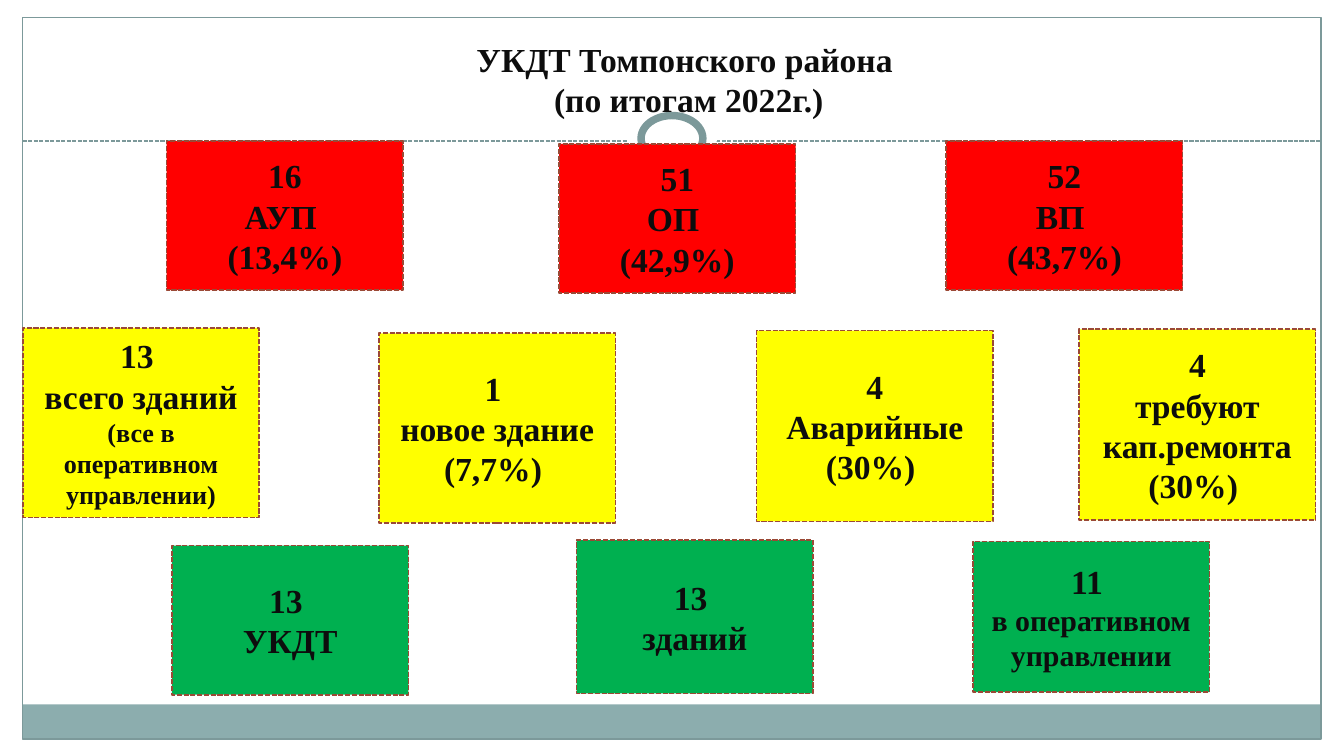
import pptx
import pptx.util
import pptx.dml.color
import pptx.enum.dml
import pptx.enum.shapes
import pptx.enum.text
import pptx.oxml.ns
import lxml.etree

# Content: a box is (left, top, height, paragraphs); a paragraph is a list of (text, size)
BIG, MID, SMALL = 18, 16, 14
TITLE = "УКДТ Томпонского района \v(по итогам 2022г.)"
ROWS = [
    ("green", [
        (1.28, 4.06, 1.11, [[("13 ", BIG)], [("УКДТ", BIG)]]),
        (4.29, 4.02, 1.14, [[("13 ", BIG)], [("зданий", BIG)]]),
        (7.24, 4.03, 1.12, [[("11 ", BIG)], [("в оперативном управлении", MID)]]),
    ]),
    ("yellow", [
        (5.63, 2.46, 1.42, [[("4", BIG)], [("Аварийные", BIG)], [("(30%) ", BIG)]]),
        (8.03, 2.45, 1.42, [[("4", BIG)], [("требуют кап.ремонта", BIG)], [("(30%) ", BIG)]]),
        (0.17, 2.44, 1.41, [[("13 ", BIG)],
                            [("всего зданий ", BIG),
                             ("(все в оперативном управлении)", SMALL)]]),
        (2.82, 2.48, 1.41, [[("1 ", BIG)], [("новое здание (7,7%) ", BIG)]]),
    ]),
    ("red", [
        (1.24, 1.05, 1.11, [[("16", BIG)], [("АУП ", BIG)], [("(13,4%)", BIG)]]),
        (4.16, 1.07, 1.11, [[("51", BIG)], [("ОП ", BIG)], [("(42,9%)", BIG)]]),
        (7.04, 1.05, 1.11, [[("52", BIG)], [("ВП ", BIG)], [("(43,7%)", BIG)]]),
    ]),
]
COLORS = {"red": "FF0000", "yellow": "FFFF00", "green": "00B050", "edge": "9B4936",
          "frame": "7C999A", "band": "8CADAE", "white": "FFFFFF", "ink": "0D0D0D"}
FONT = "Times New Roman"
WIDE = 10
HIGH = WIDE * 9 / 16
EDGE = 0.17          # frame margin at the sides
RULE = 1.05          # height of the dashed rule
BOX = 1.76           # width of every box

KIND = pptx.enum.shapes.MSO_SHAPE
inch = pptx.util.Inches


def tint(name):
    return pptx.dml.color.RGBColor.from_string(COLORS[name])


def stroke(line, name, width, dash=False):
    line.color.rgb = tint(name)
    line.width = pptx.util.Pt(width)
    if dash:
        line.dash_style = pptx.enum.dml.MSO_LINE.SQUARE_DOT


def draw(kind, x, y, w, h, fill=None, line=None, width=0.75, dash=False):
    shape = slide.shapes.add_shape(kind, inch(x), inch(y), inch(w), inch(h))
    shape.shadow.inherit = False
    if fill:
        shape.fill.solid()
        shape.fill.fore_color.rgb = tint(fill)
    else:
        shape.fill.background()
    if line:
        stroke(shape.line, line, width, dash)
    else:
        shape.line.fill.background()
    return shape


def style(para, size):
    para.alignment = pptx.enum.text.PP_ALIGN.CENTER
    font = para.font
    font.name, font.size, font.bold = FONT, pptx.util.Pt(size), True
    font.color.rgb = tint("ink")


deck = pptx.Presentation()
deck.slide_width, deck.slide_height = inch(WIDE), inch(HIGH)
slide = deck.slides.add_slide(deck.slide_layouts[6])

# Frame: bottom band, outline, dashed rule and ring
span = WIDE - 2 * EDGE
draw(KIND.RECTANGLE, EDGE, 5.24, span, 0.25, "band")
draw(KIND.RECTANGLE, EDGE, 0.13, span, 5.37, line="frame")
rule = slide.shapes.add_connector(pptx.enum.shapes.MSO_CONNECTOR.STRAIGHT,
                                  inch(EDGE), inch(RULE), inch(WIDE - EDGE), inch(RULE))
stroke(rule.line, "frame", 0.75, True)
lxml.etree.SubElement(rule._element.spPr, pptx.oxml.ns.qn("a:effectLst"))
for w, h, line in [(0.67, 0.5, None), (0.46, 0.34, "frame")]:
    draw(KIND.OVAL, (WIDE - w) / 2, 1.03 - h / 2, w, h, "white", line, 4)

# Title
head = slide.shapes.add_textbox(inch(1.42), inch(0.19), inch(7.41), inch(0.63)).text_frame
head.word_wrap = True
head.margin_top = head.margin_bottom = inch(0.1)
head.paragraphs[0].text = TITLE
style(head.paragraphs[0], BIG)

# Boxes
for color, boxes in ROWS:
    for x, y, high, paras in boxes:
        frame = draw(KIND.RECTANGLE, x, y, BOX, high, color, "edge", 0.9, True).text_frame
        frame.word_wrap = True
        frame.vertical_anchor = pptx.enum.text.MSO_ANCHOR.MIDDLE
        for i, runs in enumerate(paras):
            para = frame.add_paragraph() if i else frame.paragraphs[0]
            base = runs[0][1]
            style(para, base)
            for text, size in runs:
                run = para.add_run()
                run.text = text
                if size != base:
                    run.font.size = pptx.util.Pt(size)

deck.save("out.pptx")
